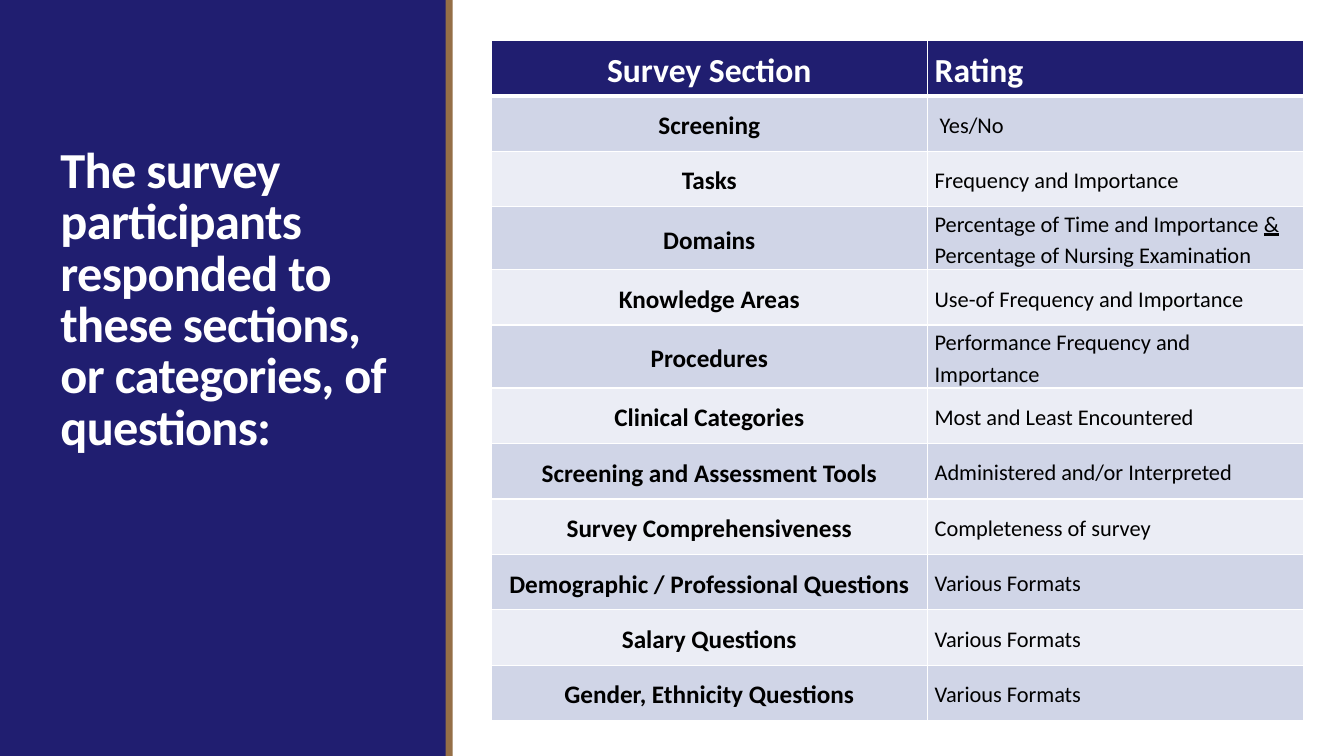
from lxml import etree
from pptx import Presentation
from pptx.dml.color import RGBColor
from pptx.enum import shapes, text
from pptx.oxml import ns
from pptx.util import Inches, Pt

HEADLINE = ("The survey participants responded to these sections, "
            "or categories, of questions:")
HEADER = ("Survey Section", "Rating")
# Text between underscores is underlined
SECTIONS = [
    ("Screening", " Yes/No"),
    ("Tasks", "Frequency and Importance"),
    ("Domains", "Percentage of Time and Importance _&_ Percentage of Nursing Examination"),
    ("Knowledge Areas", "Use-of Frequency and Importance"),
    ("Procedures", "Performance Frequency and Importance"),
    ("Clinical Categories", "Most and Least Encountered"),
    ("Screening and Assessment Tools", "Administered and/or Interpreted"),
    ("Survey Comprehensiveness", "Completeness of survey"),
    ("Demographic / Professional Questions", "Various Formats"),
    ("Salary Questions", "Various Formats"),
    ("Gender, Ethnicity Questions", "Various Formats"),
]
NAVY, BRONZE, WHITE, BLACK = "201E70", "956F47", "FFFFFF", "000000"
BANDS = ("D0D5E7", "EBEDF5")
FONT = "Calibri"
WIDTH, HEIGHT = 13.33, 7.5
PANELS = [(0, 4.43, NAVY), (4.42, 0.07, BRONZE)]  # left, width, colour
COLUMNS = (4.33, 3.73)
ROW_HEIGHT = 0.55


def color(value):
    return RGBColor.from_string(value)


def style(run, size, shade, bold):
    run.font.name, run.font.size = FONT, Pt(size)
    run.font.color.rgb, run.font.bold = color(shade), bold


def add_borders(cell, top, bottom):
    properties = cell._tc.get_or_add_tcPr()
    for place, (side, width) in enumerate(
            (("lnL", 1), ("lnR", 1), ("lnT", top), ("lnB", bottom))):
        line = etree.Element(ns.qn("a:" + side), w=str(Pt(width)))
        solid = etree.SubElement(line, ns.qn("a:solidFill"))
        etree.SubElement(solid, ns.qn("a:srgbClr"), val=WHITE)
        properties.insert(place, line)


def fill_cell(cell, row, column, words):
    heading = row == 0
    cell.fill.solid()
    cell.fill.fore_color.rgb = color(NAVY if heading else BANDS[(row - 1) % 2])
    add_borders(cell, 3 if row == 1 else 1, 3 if heading else 1)
    cell.margin_left = cell.margin_right = Inches(0.07)
    cell.margin_top = cell.margin_bottom = 0
    cell.vertical_anchor = text.MSO_ANCHOR.MIDDLE
    line = cell.text_frame.paragraphs[0]
    line.alignment = text.PP_ALIGN.LEFT if column else text.PP_ALIGN.CENTER
    line.line_spacing = 1.15
    line.space_before, line.space_after = Pt(3), Pt(2)
    size = 24 if heading else (18, 16)[column]
    for part, piece in enumerate(words.split("_")):
        run = line.add_run()
        run.text = piece
        style(run, size, WHITE if heading else BLACK, heading or column == 0)
        if part % 2:
            run.font.underline = True


deck = Presentation()
deck.slide_width, deck.slide_height = Inches(WIDTH), Inches(HEIGHT)
slide = deck.slides.add_slide(deck.slide_layouts[5])

# Side panel and its edge, behind the title
for depth, (left, width, shade) in enumerate(PANELS):
    panel = slide.shapes.add_shape(shapes.MSO_SHAPE.RECTANGLE, Inches(left), 0,
                                   Inches(width), Inches(HEIGHT))
    panel.shadow.inherit = False
    panel.fill.solid()
    panel.fill.fore_color.rgb = color(shade)
    panel.line.fill.background()
    slide.shapes._spTree.insert(2 + depth, panel._element)

# Title
title = slide.shapes.title
title.left, title.top = Inches(0.5), Inches(0.65)
title.width, title.height = Inches(3.5), Inches(3.92)
frame = title.text_frame
frame.text = HEADLINE
frame.word_wrap = True
frame.auto_size = text.MSO_AUTO_SIZE.NONE
frame.vertical_anchor = text.MSO_ANCHOR.BOTTOM
headline = frame.paragraphs[0]
headline.alignment = text.PP_ALIGN.LEFT
headline.line_spacing = 0.85
style(headline.runs[0], 36, WHITE, True)
headline.runs[0].font._element.set("spc", "-50")

# Survey table
rows = [HEADER] + SECTIONS
survey = slide.shapes.add_table(
    len(rows), len(COLUMNS), Inches(4.87), Inches(0.4),
    Inches(sum(COLUMNS)), Inches(ROW_HEIGHT * len(rows))).table
for column, width in enumerate(COLUMNS):
    survey.columns[column].width = Inches(width)
for row, entries in enumerate(rows):
    survey.rows[row].height = Inches(ROW_HEIGHT)
    for column, words in enumerate(entries):
        fill_cell(survey.cell(row, column), row, column, words)

deck.save("out.pptx")
